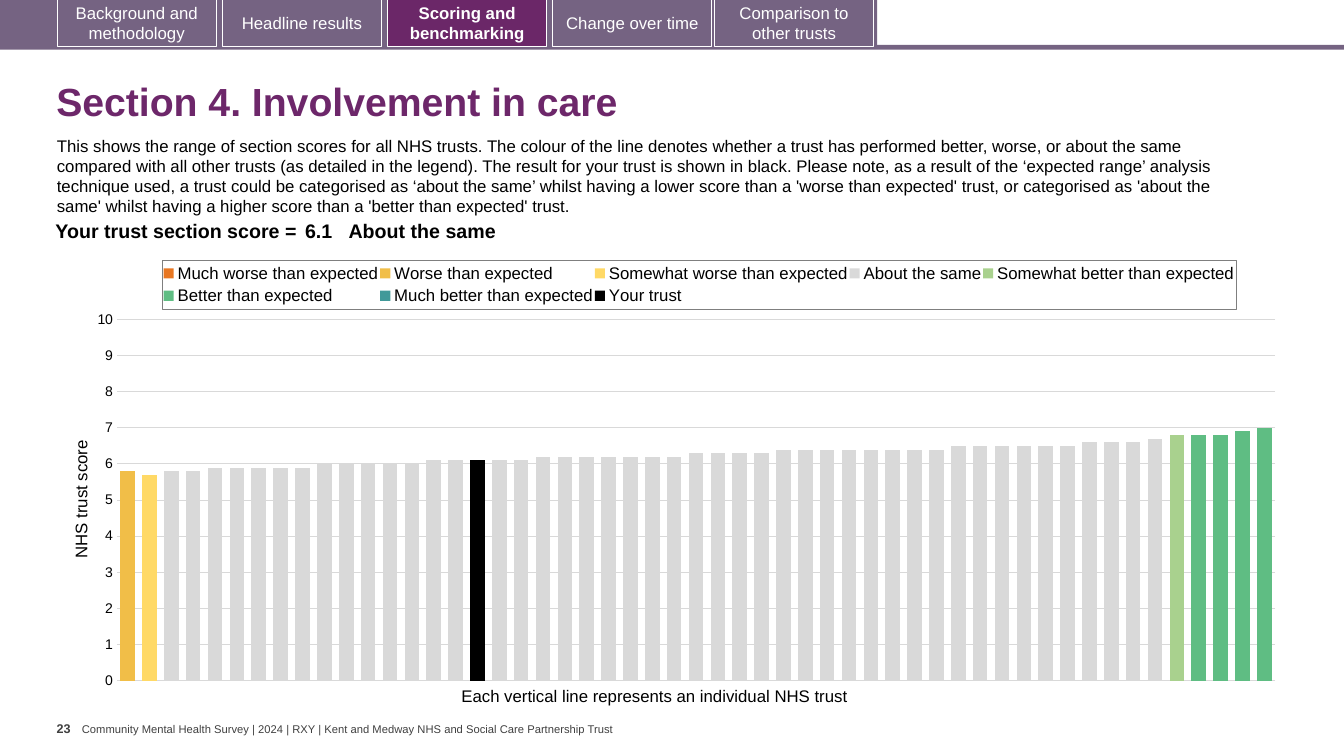
from copy import deepcopy

from lxml import etree
from pptx import Presentation
from pptx.chart.data import CategoryChartData
from pptx.dml.color import RGBColor
from pptx.enum.chart import XL_CHART_TYPE as ChartType, XL_LEGEND_POSITION as LegendPosition
from pptx.enum.chart import XL_TICK_MARK as TickMark
from pptx.enum.shapes import MSO_SHAPE as Shape
from pptx.enum.text import MSO_ANCHOR as Anchor, PP_ALIGN as Align
from pptx.oxml import parse_xml
from pptx.oxml.ns import nsdecls, qn
from pptx.util import Pt

BAR, ACTIVE, PURPLE = "756382", "6B2768", "6D276A"
WHITE, BLACK, GREY, GRID = "FFFFFF", "000000", "404040", "D9D9D9"

TABS = [
    (41, "Background and methodology"),
    (159, "Headline results"),
    (277, "Scoring and benchmarking"),
    (395, "Change over time"),
    (510.5, "Comparison to other trusts"),
]
ACTIVE_TAB = "Scoring and benchmarking"

INTRO = (
    "This shows the range of section scores for all NHS trusts. The colour of the line denotes "
    "whether a trust has performed better, worse, or about the same compared with all other trusts "
    "(as detailed in the legend). The result for your trust is shown in black. Please note, as a "
    "result of the ‘expected range’ analysis technique used, a trust could be categorised as ‘about "
    "the same’ whilst having a lower score than a 'worse than expected' trust, or categorised as "
    "'about the same' whilst having a higher score than a 'better than expected' trust."
)

TRUST_COUNT = 53
SAME_SCORES = (
    [5.8] * 2 + [5.9] * 5 + [6] * 5 + [6.1] * 5 + [6.2] * 7 + [6.3] * 4
    + [6.4] * 8 + [6.5] * 6 + [6.6] * 3 + [6.7]
)
# Series name, colour, index of its first trust, scores
BANDS = [
    ("Much worse than expected", "E87722", 0, []),
    ("Worse than expected", "F1BE48", 0, [5.8]),
    ("Somewhat worse than expected", "FFD966", 1, [5.7]),
    ("About the same", GRID, 2, SAME_SCORES),
    ("Somewhat better than expected", "A9D18E", 48, [6.8]),
    ("Better than expected", "5FBD83", 49, [6.8, 6.8, 6.9, 7]),
    ("Much better than expected", "419999", 0, []),
    ("Your trust", BLACK, 16, [6.1]),
]


def rgb(color):
    return RGBColor.from_string(color)


def style_font(font, size, color=BLACK, bold=False, name="Arial"):
    font.name, font.size, font.bold = name, Pt(size), bold
    font.color.rgb = rgb(color)


def set_insets(target, left, top, right, bottom):
    """Set the margins of a text frame or a table cell."""
    target.margin_left, target.margin_top = Pt(left), Pt(top)
    target.margin_right, target.margin_bottom = Pt(right), Pt(bottom)


def add_block(page, left, top, width, height, fill, line=None):
    block = page.shapes.add_shape(Shape.RECTANGLE, Pt(left), Pt(top), Pt(width), Pt(height))
    block.shadow.inherit = False
    block.fill.solid()
    block.fill.fore_color.rgb = rgb(fill)
    if line:
        block.line.color.rgb = rgb(line)
        block.line.width = Pt(0.75)
    else:
        block.line.fill.background()


    return block


def add_tab(page, left, label):
    active = label == ACTIVE_TAB
    tab = add_block(page, left, -0.5, 113.5, 33.5, ACTIVE if active else BAR, WHITE)
    frame = tab.text_frame
    frame.text, frame.word_wrap = label, True
    frame.vertical_anchor = Anchor.MIDDLE
    frame.paragraphs[0].alignment = Align.CENTER
    style_font(frame.paragraphs[0].runs[0].font, 12, WHITE, active)


def add_text(page, left, top, width, height, text, size, color=BLACK, bold=False,
             wrap=False, insets=(7.2, 3.6, 7.2, 3.6), anchor=Anchor.TOP):
    frame = page.shapes.add_textbox(Pt(left), Pt(top), Pt(width), Pt(height)).text_frame
    frame.text, frame.word_wrap, frame.vertical_anchor = text, wrap, anchor
    set_insets(frame, *insets)
    style_font(frame.paragraphs[0].runs[0].font, size, color, bold)


def fill_title(page, text):
    title = page.shapes.title
    title.left, title.top, title.width, title.height = Pt(33), Pt(48), Pt(899), Pt(52)
    frame = title.text_frame
    frame.text, frame.vertical_anchor = text, Anchor.MIDDLE
    para = frame.paragraphs[0]
    para.alignment, para.line_spacing = Align.LEFT, 0.9
    style_font(para.runs[0].font, 28, PURPLE, True)


def add_score_table(page):
    cells = [
        ("Your trust section score =", 189.5, 2.9, Align.RIGHT),
        ("6.1", 34, 2.9, Align.LEFT),
        ("About the same", 618.5, 0, Align.LEFT),
    ]
    table = page.shapes.add_table(1, 3, Pt(25.5), Pt(155), Pt(842), Pt(22)).table
    table.first_row = table.horz_banding = False
    for index, (text, width, inset, alignment) in enumerate(cells):
        table.columns[index].width = Pt(width)
        cell = table.cell(0, index)
        cell.fill.background()
        set_insets(cell, inset, 2.9, inset, 2.9)
        cell.text = text
        para = cell.text_frame.paragraphs[0]
        para.alignment = alignment
        style_font(para.runs[0].font, 14, bold=True)


def place(element, index, inner=False, **fractions):
    """Give a chart part a manual layout, as fractions of the chart's size."""
    for old in element.findall(qn("c:layout")):
        element.remove(old)
    layout = etree.Element(qn("c:layout"))
    manual = etree.SubElement(layout, qn("c:manualLayout"))
    if inner:
        etree.SubElement(manual, qn("c:layoutTarget"), val="inner")
    for side in "xy":
        etree.SubElement(manual, qn(f"c:{side}Mode"), val="edge")
    for side, fraction in fractions.items():
        etree.SubElement(manual, qn(f"c:{side}"), val=str(fraction))
    element.insert(index, layout)


def move_last_series_right(plot_area):
    """Plot the last series on a second, unlabelled value axis."""
    bars = plot_area.find(qn("c:barChart"))
    axes = [plot_area.find(qn("c:catAx")), plot_area.find(qn("c:valAx"))]
    new_ids = {axis.find(qn("c:axId")).get("val"): str(9001 + i) for i, axis in enumerate(axes)}
    right_bars, right_axes = deepcopy(bars), [deepcopy(axis) for axis in axes]
    bars.remove(bars.findall(qn("c:ser"))[-1])
    for series in right_bars.findall(qn("c:ser"))[:-1]:
        right_bars.remove(series)
    bars.addnext(right_bars)
    axes[1].addnext(right_axes[1])
    right_axes[1].addnext(right_axes[0])
    for part in [right_bars, *right_axes]:
        for tag in ("c:axId", "c:crossAx"):
            for link in part.findall(qn(tag)):
                link.set("val", new_ids[link.get("val")])
    value_axis = right_axes[1]
    for tag in ("c:majorGridlines", "c:title"):
        value_axis.remove(value_axis.find(qn(tag)))
    for tag, value in (("c:axPos", "r"), ("c:majorTickMark", "out"),
                       ("c:tickLblPos", "none"), ("c:crosses", "max")):
        value_axis.find(qn(tag)).set("val", value)


def style_score_axis(axis):
    axis.minimum_scale, axis.maximum_scale, axis.major_unit = 0, 10, 1
    axis.major_tick_mark = axis.minor_tick_mark = TickMark.NONE
    axis.format.line.fill.background()
    grid_line = axis.major_gridlines.format.line
    grid_line.color.rgb, grid_line.width = rgb(GRID), Pt(0.75)
    axis.tick_labels.number_format = "0"
    axis.tick_labels.number_format_is_linked = False
    style_font(axis.tick_labels.font, 10)
    frame = axis.axis_title.text_frame
    frame.text = "NHS trust score"
    style_font(frame.paragraphs[0].runs[0].font, 12)


def add_score_chart(page):
    data = CategoryChartData(number_format="0.0")
    data.categories = [str(number) for number in range(1, TRUST_COUNT + 1)]
    for name, _, first, scores in BANDS:
        after = TRUST_COUNT - first - len(scores)
        data.add_series(name, [None] * first + scores + [None] * after)
    chart = page.shapes.add_chart(
        ChartType.COLUMN_CLUSTERED, Pt(48.4), Pt(177.8), Pt(874.8), Pt(319.3), data).chart
    style_font(chart.font, 10, name="Calibri")
    chart.has_title = False
    plot = chart.plots[0]
    plot.gap_width, plot.overlap, plot.vary_by_categories = 50, 100, False
    for series, (_, color, _, _) in zip(plot.series, BANDS):
        series.format.fill.solid()
        series.format.fill.fore_color.rgb = rgb(color)
    chart.category_axis.visible = False
    style_score_axis(chart.value_axis)
    chart.has_legend = True
    chart.legend.position, chart.legend.include_in_layout = LegendPosition.TOP, False
    style_font(chart.legend.font, 12)

    root = chart._chartSpace
    plot_area, legend = root.find(f".//{qn('c:plotArea')}"), root.find(f".//{qn('c:legend')}")
    axis_title = plot_area.find(f"{qn('c:valAx')}/{qn('c:title')}")
    axis_title.find(f".//{qn('a:bodyPr')}").set("rot", "-5400000")
    move_last_series_right(plot_area)
    place(plot_area, 0, inner=True, x=0.04, y=0.158, w=0.946, h=0.808)
    place(legend, 1, x=0.077, y=0.025, w=0.877, h=0.11)
    place(axis_title, 1, x=0, y=0.421)
    legend.find(qn("c:overlay")).addnext(parse_xml(
        f'<c:spPr {nsdecls("c", "a")}><a:ln w="9525"><a:solidFill>'
        '<a:srgbClr val="7F7F7F"/></a:solidFill></a:ln></c:spPr>'))


def main():
    deck = Presentation()
    deck.slide_width, deck.slide_height = Pt(960), Pt(540)
    page = deck.slides.add_slide(deck.slide_layouts[5])
    add_block(page, 0, 32, 960, 3.5, BAR)
    add_block(page, 0, 0, 626.5, 34, BAR)
    for left, label in TABS:
        add_tab(page, left, label)
    fill_title(page, "Section 4. Involvement in care")
    add_text(page, 33.5, 93.3, 873.5, 65.5, INTRO, 12, wrap=True)
    add_score_chart(page)
    add_score_table(page)
    add_text(page, 322.5, 486, 296, 22, "Each vertical line represents an individual NHS trust", 12)
    add_text(page, 40.5, 511.3, 18, 29, "23", 9, GREY, True, insets=(0, 3.6, 0, 3.6))
    add_text(page, 58.5, 516, 384.5, 9.5,
             "Community Mental Health Survey | 2024 | RXY | Kent and Medway NHS and Social Care "
             "Partnership Trust", 8, GREY, insets=(0, 0, 0, 0), anchor=Anchor.MIDDLE)
    deck.save("out.pptx")


if __name__ == "__main__":
    main()
